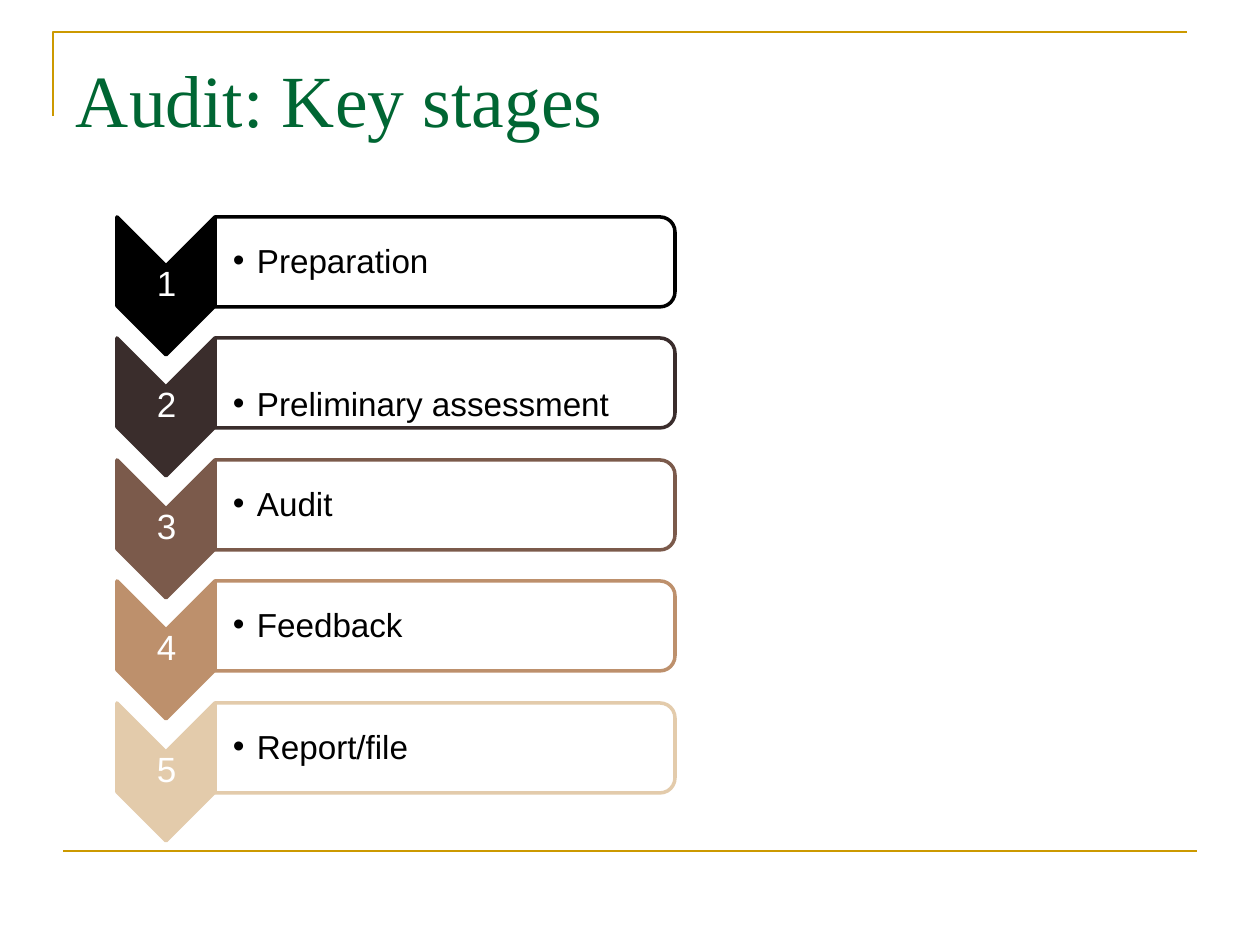
from lxml.etree import SubElement
from pptx import Presentation
from pptx.dml.color import RGBColor
from pptx.enum.shapes import MSO_CONNECTOR, MSO_SHAPE
from pptx.enum.text import MSO_ANCHOR, MSO_AUTO_SIZE, PP_ALIGN
from pptx.oxml.ns import qn
from pptx.util import Pt

PX = 914400 / 126  # EMU per px

BLACK = RGBColor(0x00, 0x00, 0x00)
WHITE = RGBColor(0xFF, 0xFF, 0xFF)
GOLD = RGBColor(0xCC, 0x99, 0x00)
GREEN = RGBColor(0x00, 0x66, 0x33)
STAGES = [
    ("Preparation", BLACK),
    ("Preliminary assessment", RGBColor(0x3A, 0x2D, 0x2C)),
    ("Audit", RGBColor(0x7B, 0x5A, 0x4B)),
    ("Feedback", RGBColor(0xBD, 0x90, 0x6C)),
    ("Report/file", RGBColor(0xE3, 0xCB, 0xAB)),
]


def px(*values):
    return [round(v * PX) for v in values]


def set_text(sp, text, size, color, font="Arial", align=PP_ALIGN.LEFT,
             anchor=MSO_ANCHOR.MIDDLE, margins=(1, 1, 1, 1), spacing=0.9, bullet=False):
    tf = sp.text_frame
    tf.word_wrap = True
    tf.auto_size = MSO_AUTO_SIZE.NONE
    tf.vertical_anchor = anchor
    tf.margin_left, tf.margin_top, tf.margin_right, tf.margin_bottom = px(*margins)
    p = tf.paragraphs[0]
    p.alignment = align
    p.line_spacing = spacing
    r = p.add_run()
    r.text = text
    r.font.size = Pt(size)
    r.font.name = font
    r.font.color.rgb = color
    if bullet:
        indent = px(24)[0]
        pPr = p._p.get_or_add_pPr()
        pPr.set("marL", str(indent))
        pPr.set("indent", str(-indent))
        SubElement(pPr, qn("a:buFont")).set("typeface", "Arial")
        SubElement(pPr, qn("a:buChar")).set("char", "•")


prs = Presentation()
prs.slide_width, prs.slide_height = px(1260, 945)
s = prs.slides.add_slide(prs.slide_layouts[5])

# Gold corner at the top and rule at the bottom
builder = s.shapes.build_freeform(53, 116, scale=PX)
builder.add_line_segments([(53, 32), (1187, 32)], close=False)
corner = builder.convert_to_shape()
corner.fill.background()
corner.shadow.inherit = False
rule = s.shapes.add_connector(MSO_CONNECTOR.STRAIGHT, *px(63, 851, 1197, 851))
SubElement(rule._element.spPr, qn("a:effectLst"))
for gold_line in (corner, rule):
    gold_line.line.color.rgb = GOLD
    gold_line.line.width = Pt(1.5)

# Title
title = s.shapes.title
title.left, title.top, title.width, title.height = px(63, 38, 1134, 158)
set_text(title, "Audit: Key stages", 42, GREEN, font="Times New Roman",
         anchor=MSO_ANCHOR.TOP, margins=(13, 16, 13, 6), spacing=1.0)

# One row per stage: chevron with its number, box with its name
for i, (name, color) in enumerate(STAGES):
    top = 217 + i * 243 // 2

    chevron = s.shapes.add_shape(MSO_SHAPE.CHEVRON, *px(97, top + 20, 138, 98))
    box = s.shapes.add_shape(MSO_SHAPE.ROUND_2_SAME_RECTANGLE,
                             *px(400, top - 185, 90, 460))
    for sp, fill in ((chevron, color), (box, WHITE)):
        sp.rotation = 90
        sp.shadow.inherit = False
        sp.fill.solid()
        sp.fill.fore_color.rgb = fill
        sp.line.color.rgb = color
        sp.line.width = Pt(2)
    solid = box._element.spPr.find(qn("a:solidFill"))
    SubElement(solid[0], qn("a:alpha")).set("val", "90000")

    number = s.shapes.add_textbox(*px(118, top + 48, 97, 41))
    set_text(number, str(i + 1), 20, WHITE, align=PP_ALIGN.CENTER)

    # The second name sits low in its box
    inset = 45 if i == 1 else 1
    label = s.shapes.add_textbox(*px(214, top + 5, 456, 81))
    set_text(label, name, 19, BLACK, margins=(19, inset, 1, 1), bullet=True)

prs.save("out.pptx")
